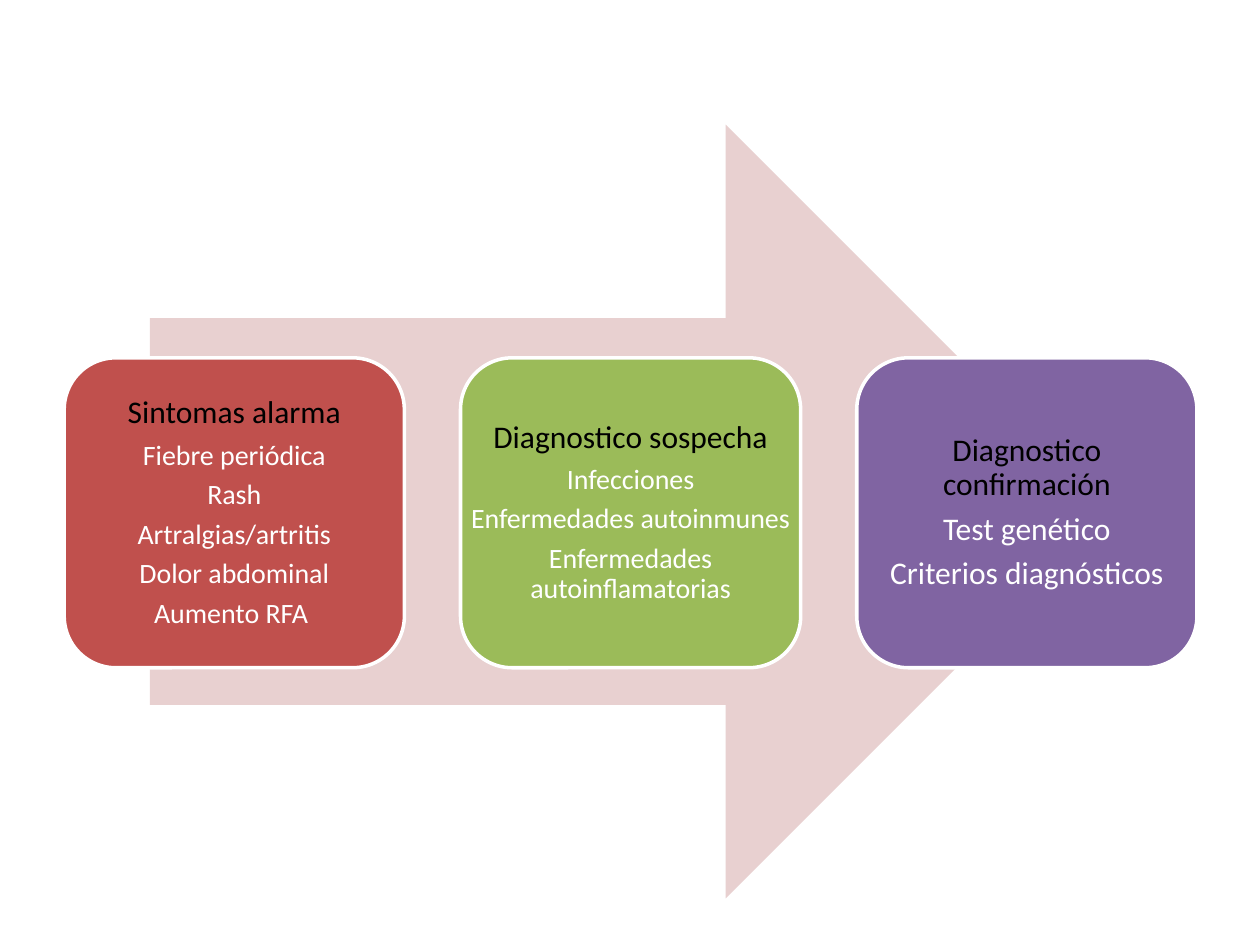
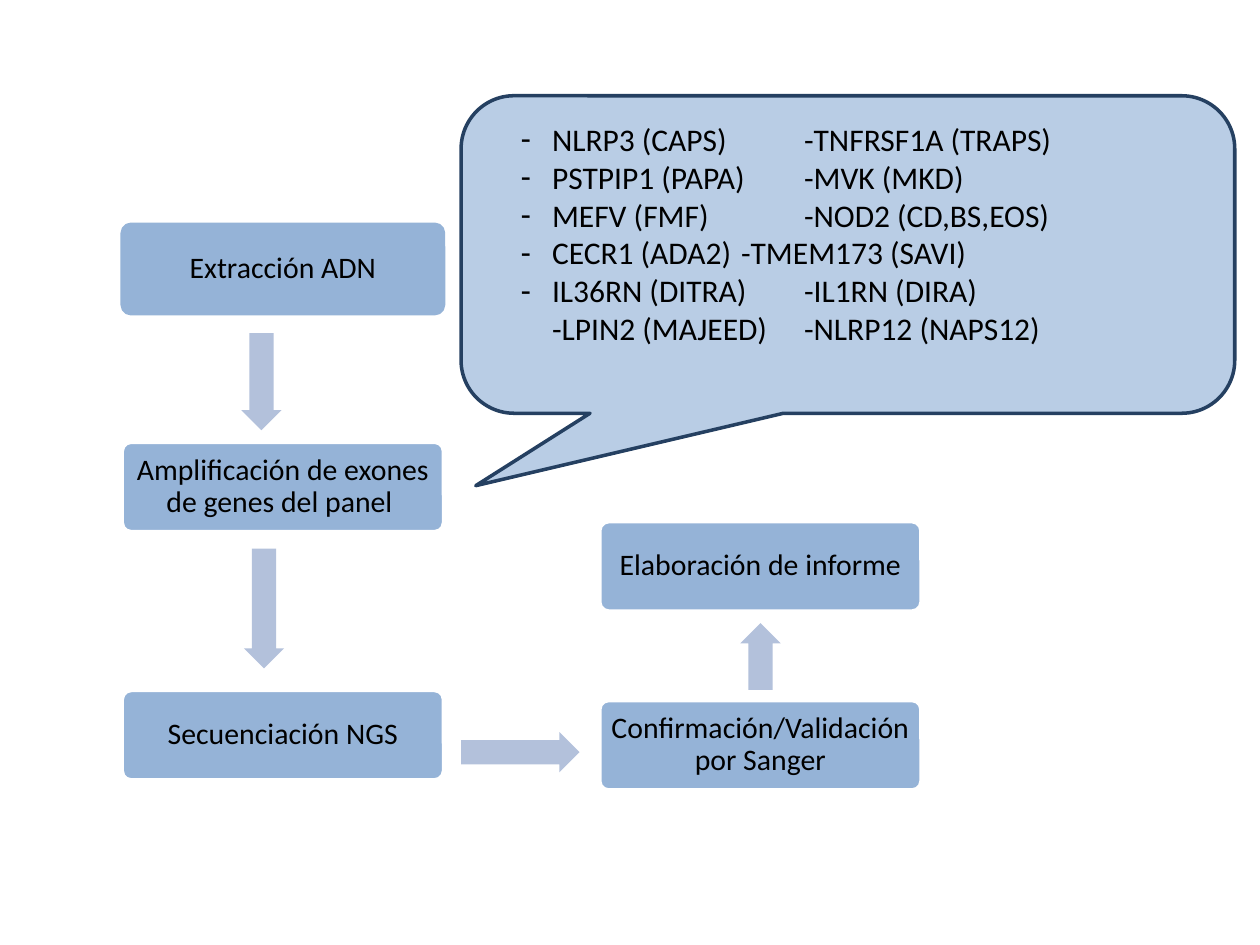
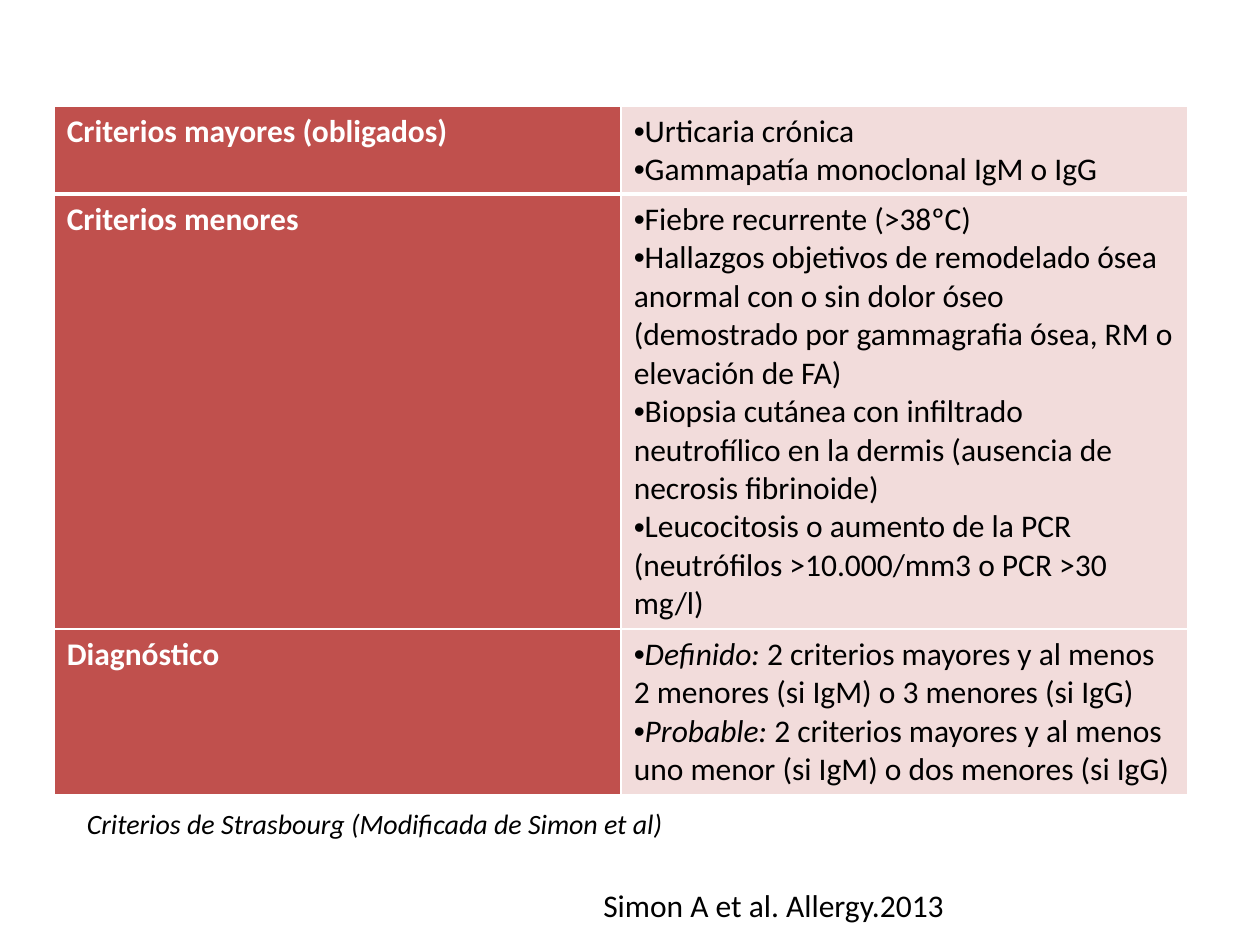
from pptx import Presentation
from pptx.dml.color import RGBColor as Rgb
from pptx.enum.shapes import MSO_SHAPE as Kind
from pptx.enum.text import MSO_ANCHOR as Anchor, PP_ALIGN as Align
from pptx.oxml.ns import qn
from pptx.util import Inches, Pt
from lxml.etree import SubElement as Sub

HUES = {
    "white": "FFFFFF", "black": "000000",
    "red": "C0504D", "green": "9BBB59", "violet": "8064A2",
    "rose": "E8D0D0", "pale": "F2DCDB",
    "blue": "95B3D7", "steel": "B3C1DB", "sky": "B9CDE5", "navy": "254061",
}
FONT = "Calibri"

deck = Presentation()
deck.slide_width, deck.slide_height = Inches(10), Inches(7.5)
UNIT = deck.slide_width / 100  # the grid has 100 columns and 75 rows
blank = deck.slide_layouts[6]


def draw(slide, kind, area, fill=None, line=None, adj=()):
    """Place a preset shape, or a text box if kind is None; area is in grid units."""
    spot = [round(n * UNIT) for n in area]
    if kind is None:
        return slide.shapes.add_textbox(*spot)
    shape = slide.shapes.add_shape(kind, *spot)
    shape.shadow.inherit = False
    shape.fill.solid()
    shape.fill.fore_color.rgb = Rgb.from_string(HUES[fill])
    if line:
        shape.line.color.rgb = Rgb.from_string(HUES[line])
        shape.line.width = Pt(2)
    else:
        shape.line.fill.background()
    for i, share in enumerate(adj):
        shape.adjustments[i] = share
    return shape


def write(frame, paras, mid=False, inset=None):
    """Fill a frame; a paragraph is (bullet, margin, hang, runs),
    a run is (text, size, hue, style) with b or i in style."""
    frame.word_wrap = True
    frame.vertical_anchor = Anchor.MIDDLE if mid else Anchor.TOP
    if inset is not None:
        frame.margin_left = frame.margin_right = Inches(inset)
        frame.margin_top = frame.margin_bottom = Inches(inset)
    for i, (mark, left, hang, runs) in enumerate(paras):
        para = frame.add_paragraph() if i else frame.paragraphs[0]
        para.alignment = Align.CENTER if mid else Align.LEFT
        if mid:
            para.line_spacing = 0.9
            if i < len(paras) - 1:
                para.space_after = Pt(round(runs[0][1] * 0.33, 1))
        props = para._p.get_or_add_pPr()
        props.set("marL", str(Inches(left)))
        props.set("indent", str(-Inches(hang)))
        if mark:
            Sub(props, qn("a:buFont"), typeface="Arial")
            Sub(props, qn("a:buChar"), char=mark)
        for text, size, hue, style in runs:
            run = para.add_run()
            run.text = text
            run.font.name, run.font.size = FONT, Pt(size)
            run.font.color.rgb = Rgb.from_string(HUES[hue])
            run.font.bold, run.font.italic = "b" in style, "i" in style


# Slide 1: three stages on an arrow
slide = deck.slides.add_slide(blank)
draw(slide, Kind.RIGHT_ARROW, (11.9, 9.9, 76.4, 61.4), "rose")
stages = [
    ("red", 16, "Sintomas alarma",
     ["Fiebre periódica", "Rash", "Artralgias/artritis", "Dolor abdominal", "Aumento RFA "]),
    ("green", 16, "Diagnostico sospecha",
     ["Infecciones", "Enfermedades autoinmunes", "Enfermedades autoinflamatorias"]),
    ("violet", 18, "Diagnostico confirmación",
     ["Test genético", "Criterios diagnósticos"]),
]
for col, (hue, size, head, items) in enumerate(stages):
    area = (5.1 + col * 31.45, 28.4, 27, 24.6)
    draw(slide, Kind.ROUNDED_RECTANGLE, area, hue, "white")
    paras = [(None, 0, 0, [(head, 18, "black", "")])]
    paras += [(None, 0, 0, [(item, size, "white", "")]) for item in items]
    write(draw(slide, None, area).text_frame, paras, mid=True, inset=0.07)

# Slide 2: laboratory steps and the gene panel
slide = deck.slides.add_slide(blank)
LEFT, RIGHT = 9.7, 47.6
steps = [
    (LEFT, 17.8, "blue", "Extracción ADN"),
    (LEFT, 35.1, "white", "Amplificación de exones de genes del panel "),
    (LEFT, 54.8, "white", "Secuenciación NGS"),
    (RIGHT, 55.6, "white", "Confirmación/Validación por Sanger"),
    (RIGHT, 41.4, "white", "Elaboración de informe"),
]
for x, y, edge, text in steps:
    step = draw(slide, Kind.ROUNDED_RECTANGLE, (x, y, 25.5, 7.1), "blue", edge, [0.1])
    write(step.text_frame, [(None, 0, 0, [(text, 17, "black", "")])], mid=True, inset=0.05)
for x, y, long, turn in [(16.9, 28.7, 7.7, 90), (16.2, 46.7, 9.5, 90),
                         (36.6, 58.1, 9.4, 0), (57.7, 50.5, 5.3, 270)]:
    arrow = draw(slide, Kind.RIGHT_ARROW, (x, y, long, 3.2), "steel", adj=[0.6, 0.5])
    arrow.rotation = turn

panel = draw(slide, Kind.ROUNDED_RECTANGULAR_CALLOUT, (36.6, 7.6, 61.4, 25.2),
             "sky", "navy", [-0.481, 0.728, 0.167])
genes = [
    ("-", "NLRP3 (CAPS)\t\t-TNFRSF1A (TRAPS)"),
    ("-", "PSTPIP1 (PAPA)\t-MVK (MKD)"),
    ("-", "MEFV (FMF)\t\t-NOD2 (CD,BS,EOS)"),
    ("-", "CECR1 (ADA2)\t-TMEM173 (SAVI)"),
    ("-", "IL36RN (DITRA)\t-IL1RN (DIRA)"),
    (None, "-LPIN2 (MAJEED)\t-NLRP12 (NAPS12)"),
]
write(panel.text_frame, [(mark, 0.5, 0.25 if mark else 0, [(text, 18, "black", "")])
                         for mark, text in genes])
panel.text_frame.margin_top = Inches(0.07)

# Slide 3: table of criteria
slide = deck.slides.add_slide(blank)
rows = [
    (7, "Criterios mayores (obligados)",
     [("", "Urticaria crónica"), ("", "Gammapatía monoclonal IgM o IgG")]),
    (34.5, "Criterios menores",
     [("", "Fiebre recurrente (>38ºC)"),
      ("", "Hallazgos objetivos de remodelado ósea anormal con o sin dolor óseo "
           "(demostrado por gammagrafia ósea, RM o elevación de FA)"),
      ("", "Biopsia cutánea con infiltrado neutrofílico en la dermis "
           "(ausencia de necrosis fibrinoide)"),
      ("", "Leucocitosis o aumento de la PCR (neutrófilos >10.000/mm3 o PCR >30 mg/l)")]),
    (13.2, "Diagnóstico",
     [("Definido: ", "2 criterios mayores y al menos 2 menores (si IgM) o 3 menores (si IgG)"),
      ("Probable: ", "2 criterios mayores y al menos uno menor (si IgM) o dos menores (si IgG)")]),
]
spot = [round(n * UNIT) for n in (4.3, 8.4, 90, 54.7)]
table = slide.shapes.add_table(len(rows), 2, *spot).table
for r, (tall, head, items) in enumerate(rows):
    table.rows[r].height = round(tall * UNIT)
    notes = []
    for lead, text in items:
        runs = [(lead, 18, "black", "i")] if lead else []
        notes.append(("•", 0, 0, runs + [(text, 18, "black", "")]))
    sides = [("red", [(None, 0, 0, [(head, 18, "white", "b")])]), ("pale", notes)]
    for c, (hue, paras) in enumerate(sides):
        cell = table.cell(r, c)
        write(cell.text_frame, paras)
        props = cell._tc.get_or_add_tcPr()
        for edge in ("L", "R", "T", "B"):
            thick = (r == 0 and edge == "B") or (r == 1 and edge == "T")
            line = Sub(props, qn("a:ln" + edge), w=str(Pt(3 if thick else 1)))
            Sub(Sub(line, qn("a:solidFill")), qn("a:srgbClr"), val=HUES["white"])
        cell.fill.solid()
        cell.fill.fore_color.rgb = Rgb.from_string(HUES[hue])

for area, text, size, style in [
    ((5.9, 63.5, 48.8, 3.7), "Criterios de Strasbourg (Modificada de Simon et al)", 16, "i"),
    ((46.9, 69.8, 50.4, 4), "Simon A et al. Allergy.2013", 18, ""),
]:
    write(draw(slide, None, area).text_frame, [(None, 0, 0, [(text, size, "black", style)])])

deck.save("out.pptx")
